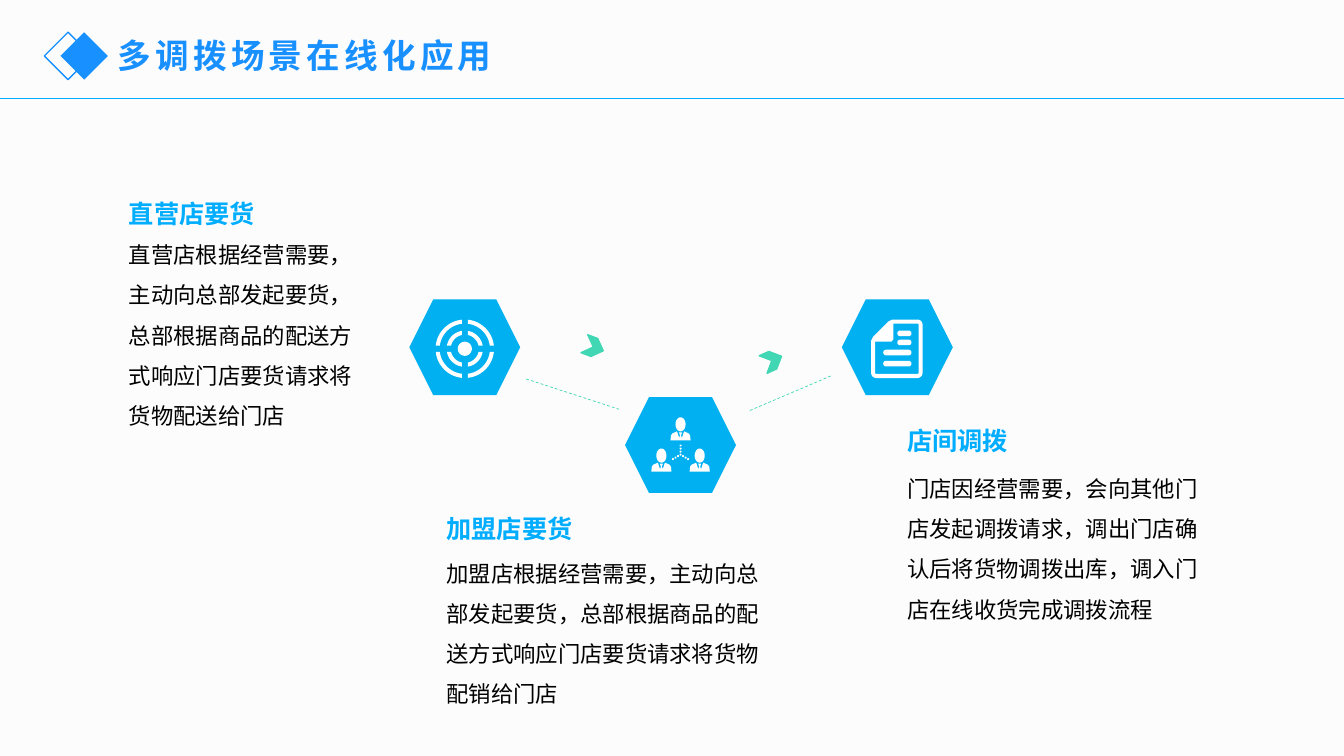
from math import asin, cos, degrees, radians, sin

from lxml.etree import SubElement
from pptx import Presentation
from pptx.dml.color import RGBColor
from pptx.enum.dml import MSO_LINE
from pptx.enum.shapes import MSO_CONNECTOR, MSO_SHAPE
from pptx.enum.text import MSO_AUTO_SIZE, PP_ALIGN
from pptx.oxml.ns import qn
from pptx.util import Pt

PX = 9144  # EMU in one px, 100 px to the inch
FONT = "Noto Sans CJK SC"
COLORS = {
    "background": "FCFCFC",
    "title": "1890FF",
    "accent": "00ADFF",
    "hexagon": "00B0F0",
    "arrow": "41D7B4",
    "body": "000000",
    "icon": "FFFFFF",
}
# heading, heading box, body, body box
SCENARIOS = [
    ("直营店要货", (118, 177, 189, 48),
     "直营店根据经营需要，主动向总部发起要货，总部根据商品的配送方式响应门店要货请求将货物配送给门店",
     (118, 221, 262, 206)),
    ("加盟店要货", (433, 489, 200, 48),
     "加盟店根据经营需要，主动向总部发起要货，总部根据商品的配送方式响应门店要货请求将货物配销给门店",
     (433, 537, 330, 165)),
    ("店间调拨", (890, 402, 185, 48),
     "门店因经营需要，会向其他门店发起调拨请求，调出门店确认后将货物调拨出库，调入门店在线收货完成调拨流程",
     (890, 453, 318, 165)),
]


def color(name):
    return RGBColor.from_string(COLORS[name])


def emu(*lengths):
    return [round(length * PX) for length in lengths]


def add_text(slide, text, box, size=16, ink="body", bold=False,
             line_spacing=None, align=None, tracking=None):
    shape = slide.shapes.add_textbox(*emu(*box))
    frame = shape.text_frame
    frame.word_wrap = True
    frame.auto_size = MSO_AUTO_SIZE.SHAPE_TO_FIT_TEXT
    paragraph = frame.paragraphs[0]
    paragraph.line_spacing = line_spacing
    paragraph.alignment = align
    run = paragraph.add_run()
    run.text = text
    run.font.name = FONT
    run.font.size = Pt(size)
    run.font.bold = bold
    run.font.color.rgb = color(ink)
    properties = run.font._element
    SubElement(properties, qn("a:ea")).set("typeface", FONT)
    if tracking:
        properties.set("spc", str(tracking * 100))


def paint(shape, fill=None, line=None):
    shape.shadow.inherit = False
    if fill:
        shape.fill.solid()
        shape.fill.fore_color.rgb = color(fill)
    else:
        shape.fill.background()
    if line:
        shape.line.color.rgb = color(line)
        shape.line.width = Pt(1)
    else:
        shape.line.fill.background()


def add_preset(slide, preset, box, fill=None, line=None, rotation=0):
    shape = slide.shapes.add_shape(preset, *emu(*box))
    shape.rotation = rotation
    paint(shape, fill, line)


def add_line(slide, start, end, ink, width, dash=None):
    connector = slide.shapes.add_connector(MSO_CONNECTOR.STRAIGHT, *emu(*start, *end))
    connector.line.color.rgb = color(ink)
    connector.line.width = Pt(width)
    connector.line.dash_style = dash
    SubElement(connector._element.spPr, qn("a:effectLst"))


def add_icon(slide, contours):
    """Draw closed contours as one shape; a contour inside another is a hole."""
    first, *others = [[emu(*point) for point in contour] for contour in contours]
    builder = slide.shapes.build_freeform(*first[0], scale=1.0)
    builder.add_line_segments(first[1:], close=True)
    for contour in others:
        builder.move_to(*contour[0])
        builder.add_line_segments(contour[1:], close=True)
    paint(builder.convert_to_shape(), "icon")


def arc(x, y, radius_x, radius_y, start, end, steps=12):
    """Points from start to end, in degrees clockwise from the right."""
    angles = [radians(start + (end - start) * i / steps) for i in range(steps + 1)]
    return [(x + radius_x * cos(a), y + radius_y * sin(a)) for a in angles]


def ellipse(x, y, radius_x, radius_y):
    return arc(x, y, radius_x, radius_y, 0, 345, 23)


def corners(left, top, right, bottom, radius, first=0):
    """Rounded corners clockwise from the top left, starting at number first."""
    centers = [(left + radius, top + radius), (right - radius, top + radius),
               (right - radius, bottom - radius), (left + radius, bottom - radius)]
    return [point for i in range(first, 4)
            for point in arc(*centers[i], radius, radius, 180 + 90 * i, 270 + 90 * i, 6)]


def ring_quarter(x, y, inner, outer, turn, gap=3):
    outer_cut, inner_cut = (degrees(asin(gap / radius)) for radius in (outer, inner))
    return (arc(x, y, outer, outer, turn + outer_cut, turn + 90 - outer_cut)
            + arc(x, y, inner, inner, turn + 90 - inner_cut, turn + inner_cut))


def target_icon(x, y):
    rings = [ring_quarter(x, y, inner, outer, turn)
             for inner, outer in ((14, 18), (25, 29)) for turn in range(0, 360, 90)]
    return rings + [ellipse(x, y, 7, 7)]


def person(x, top):
    half = [(1.5, 15), (0.5, 18), (1.5, 21), (1.5, 20), (3.5, 14),
            (8, 16), (9.5, 18), (10, 23)]
    right = [(x + dx, top + dy) for dx, dy in half]
    left = [(x - dx, top + dy) for dx, dy in reversed(half)]
    return [ellipse(x, top + 7, 5, 7), right + left]


def team_icon(x, top):
    people = [(x, top), (x - 19, top + 31), (x + 19, top + 31)]
    dots = [(x, top + 28 + 3 * i) for i in range(4)]
    dots += [(x + side * 2.5 * i, top + 37 + 1.5 * i) for side in (-1, 1) for i in (1, 2, 3)]
    return ([contour for place in people for contour in person(*place)]
            + [ellipse(*dot, 1, 1) for dot in dots])


def document_icon(left, top):
    right, bottom = left + 51, top + 58
    page = [(left, top + 21), (left + 2, top + 17), (left + 17, top + 2), (left + 21, top)]
    page += corners(left, top, right, bottom, 5, first=1)
    fold = [(left + 4, top + 22), (left + 20, top + 22), (left + 22, top + 20), (left + 22, top + 4)]
    fold += corners(left + 4, top + 4, right - 4, bottom - 4, 1, first=1)
    bars = [corners(left + indent, top + y, left + 40, top + y + 5.5, 2.7)
            for indent, y in ((26, 11), (26, 20), (12, 30), (12, 41))]
    return [page, fold] + bars


def add_header(slide):
    add_line(slide, (0, 98), (1333, 98), "accent", 1)
    add_preset(slide, MSO_SHAPE.DIAMOND, (44, 32, 47, 47), line="title")
    add_preset(slide, MSO_SHAPE.DIAMOND, (60, 32, 47, 47), fill="title")
    add_text(slide, "多调拨场景在线化应用", (107, 30, 447, 50), size=24,
             ink="title", bold=True, tracking=3)


def main():
    presentation = Presentation()
    presentation.slide_width, presentation.slide_height = emu(1333, 750)
    slide = presentation.slides.add_slide(presentation.slide_layouts[6])
    slide.background.fill.solid()
    slide.background.fill.fore_color.rgb = color("background")

    add_header(slide)
    for start, end in (((522, 376), (614, 406)), ((824, 373), (742, 408))):
        add_line(slide, start, end, "arrow", 0.5, MSO_LINE.DASH)
    for left, top, rotation in ((579, 335, 20.6), (756, 348, 335.8)):
        add_preset(slide, MSO_SHAPE.CHEVRON, (left, top, 20, 19), "arrow", "arrow", rotation)
    for heading, heading_box, body, body_box in SCENARIOS:
        add_text(slide, body, body_box, line_spacing=1.5)
        add_text(slide, heading, heading_box, size=18, ink="accent", bold=True,
                 line_spacing=1.5, align=PP_ALIGN.JUSTIFY)
    for left, top, icon in ((406, 297, target_icon(461, 346)),
                            (620, 394, team_icon(675, 414)),
                            (835, 297, document_icon(864, 317))):
        add_preset(slide, MSO_SHAPE.HEXAGON, (left, top, 110, 95), "hexagon")
        add_icon(slide, icon)
    presentation.save("out.pptx")


if __name__ == "__main__":
    main()
